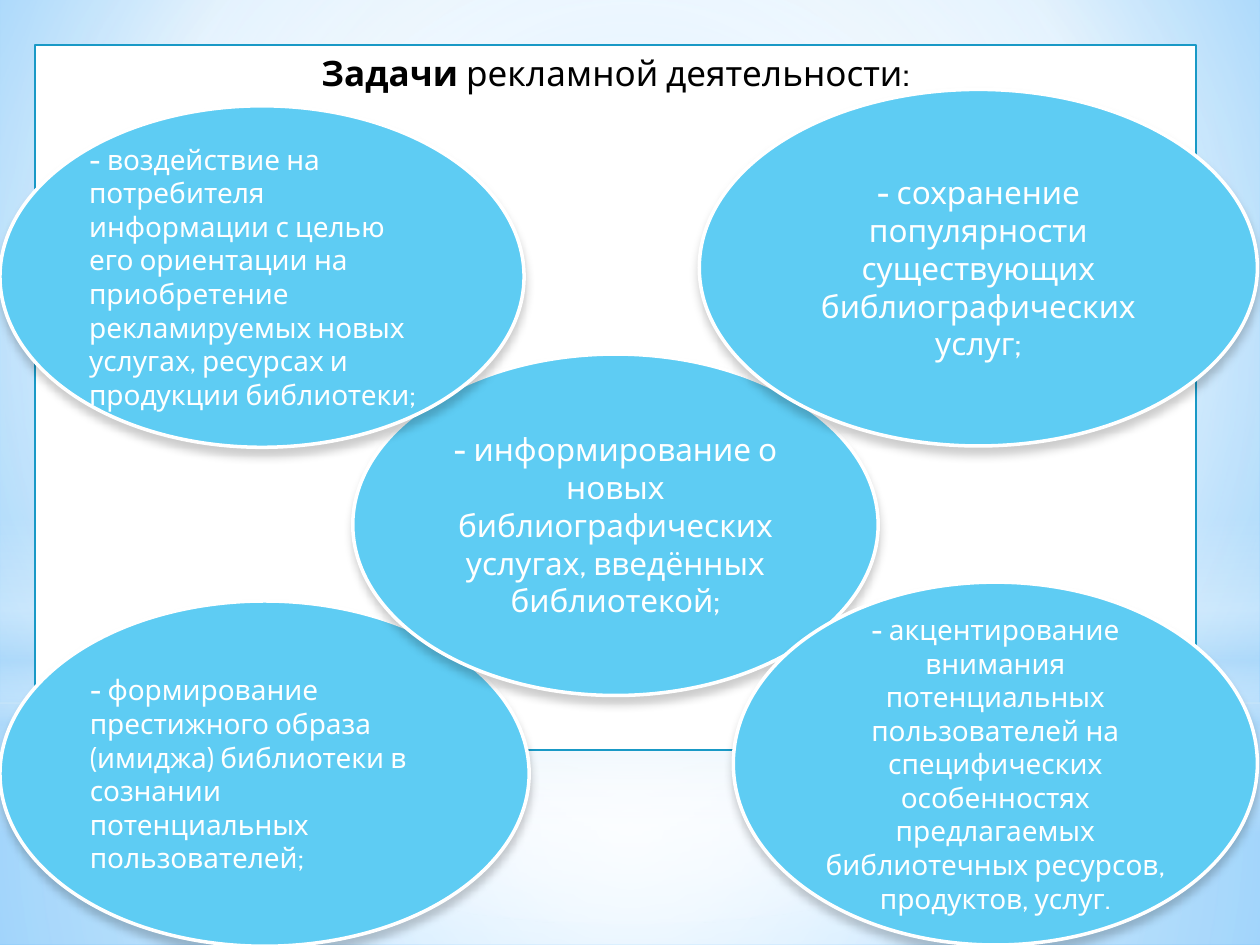
import pptx
import pptx.util
import pptx.dml.color
import pptx.enum.shapes
import pptx.enum.text
import pptx.oxml
import pptx.oxml.ns

COLS, ROWS = 100, 75  # grid cells across and down the slide
CELL = pptx.util.Inches(0.1)
HUES = {"white": "FFFFFF", "black": "000000", "edge": "1999C6", "oval": "5ECCF3",
        "pale": "B4DCFA", "sky": "9ED5FF", "deep": "5BB9FF"}
FORM = {"rect": pptx.enum.shapes.MSO_SHAPE.RECTANGLE,
        "oval": pptx.enum.shapes.MSO_SHAPE.OVAL}
ALIGN = pptx.enum.text.PP_ALIGN
ANCHOR = pptx.enum.text.MSO_ANCHOR
NS = pptx.oxml.ns.nsdecls("a")
MID = (50, 50, 50, 50)


def color(name):
    return pptx.dml.color.RGBColor.from_string(HUES[name])


def fade(stops, rect=None):
    """Gradient fill: stops are (place, hue, opacity); rect is the round centre."""
    marks = "".join(
        f'<a:gs pos="{at * 1000}"><a:srgbClr val="{HUES[hue]}">'
        f'<a:alpha val="{alpha * 1000}"/></a:srgbClr></a:gs>'
        for at, hue, alpha in stops)
    if rect:
        sides = " ".join(f'{s}="{v * 1000}"' for s, v in zip("ltrb", rect))
        way = f'<a:path path="circle"><a:fillToRect {sides}/></a:path>'
    else:
        way = '<a:lin ang="5400000" scaled="0"/>'
    return pptx.oxml.parse_xml(
        f'<a:gradFill {NS} rotWithShape="1"><a:gsLst>{marks}</a:gsLst>{way}</a:gradFill>')


def swap(parent, grad):
    old = parent.find(pptx.oxml.ns.qn("a:solidFill"))
    parent.replace(old, grad)


def shade(shape):
    """Soft shadow straight below the shape."""
    blur, dist = pptx.util.Pt(5), pptx.util.Pt(4)
    shape._element.spPr.append(pptx.oxml.parse_xml(
        f'<a:effectLst {NS}><a:outerShdw blurRad="{blur}" dist="{dist}" dir="5400000" '
        f'algn="ctr" rotWithShape="0"><a:srgbClr val="{HUES["black"]}">'
        '<a:alpha val="20000"/></a:srgbClr></a:outerShdw></a:effectLst>'))


def draw(slide, form, box, fill, edge=None, wide=0):
    shape = slide.shapes.add_shape(FORM[form], *(round(v * CELL) for v in box))
    shape.shadow.inherit = False
    shape.fill.solid()
    shape.fill.fore_color.rgb = color(fill)
    if edge:
        shape.line.color.rgb = color(edge)
        shape.line.width = pptx.util.Pt(wide)
    else:
        shape.line.fill.background()
    return shape


def write(shape, runs, size, hue, align, anchor):
    """Runs are (text, bold) pairs of one paragraph."""
    frame = shape.text_frame
    frame.word_wrap = True
    frame.vertical_anchor = anchor
    para = frame.paragraphs[0]
    para.alignment = align
    for text, bold in runs:
        run = para.add_run()
        run.text = text
        look = {"name": "Cabin", "size": pptx.util.Pt(size), "bold": bold}
        for key, value in look.items():
            setattr(run.font, key, value)
        run.font.color.rgb = color(hue)


def inside(box, part):
    """Move a part from the box's own corner to the slide's."""
    return (box[0] + part[0], box[1] + part[1], part[2], part[3])


def backdrop(slide, box):
    slide.background.fill.solid()
    base = slide._element.find(".//" + pptx.oxml.ns.qn("p:bgPr"))
    swap(base, fade([(0, "sky", 100), (60, "white", 100), (100, "deep", 100)],
                    (20, 10, 20, 60)))
    wide, split = box[2], 55.8
    veils = [
        ("rect", (0, split, wide, box[3] - split), MID,
         [(0, "white", 91), (37, "white", 76), (100, "pale", 79)]),
        ("rect", (0, 0, wide, split), MID,
         [(0, "white", 89), (48, "white", 62), (100, "pale", 79)]),
        ("rect", (0, 41.2, wide, 25), None,
         [(0, "white", 0), (29, "white", 30), (45, "pale", 40),
          (55, "white", 26), (65, "pale", 60), (100, "white", 0)]),
        ("oval", (0, 17.5, wide, split), MID, [(0, "white", 100), (56, "white", 0)]),
    ]
    for form, part, rect, stops in veils:
        veil = draw(slide, form, inside(box, part), "white")
        swap(veil._element.spPr, fade(stops, rect))


def panel(slide, box):
    sheet = draw(slide, "rect", box, "white", "edge", 1.25)
    write(sheet, [("Задачи ", True), ("рекламной деятельности:", False)],
          20, "black", ALIGN.CENTER, ANCHOR.TOP)


def tasks(slide, box):
    ovals = [
        ((0, 47.7, 42, 27.4), 16, ALIGN.LEFT,
         "формирование престижного образа (имиджа) библиотеки в сознании "
         "потенциальных пользователей;"),
        ((28, 28.1, 41.7, 27.1), 18, ALIGN.CENTER,
         "информирование о новых библиографических услугах, введённых библиотекой;"),
        ((55.5, 7.1, 44.3, 28.3), 18, ALIGN.CENTER,
         "сохранение популярности существующих библиографических услуг;"),
        ((0, 8.4, 41.6, 27.1), 16, ALIGN.LEFT,
         "воздействие на потребителя информации с целью его ориентации на "
         "приобретение рекламируемых новых услугах, ресурсах и продукции библиотеки;"),
        ((58.2, 46.2, 41.6, 28.8), 16, ALIGN.CENTER,
         "акцентирование внимания потенциальных пользователей на специфических "
         "особенностях предлагаемых библиотечных ресурсов, продуктов, услуг."),
    ]
    for part, size, align, text in ovals:
        oval = draw(slide, "oval", inside(box, part), "oval", "white", 2)
        oval._element.spPr.remove(oval._element.spPr.find(pptx.oxml.ns.qn("a:effectLst")))
        shade(oval)
        write(oval, [("-", True), (" " + text, False)], size, "white", align, ANCHOR.MIDDLE)


def main():
    deck = pptx.Presentation()
    deck.slide_width, deck.slide_height = COLS * CELL, ROWS * CELL
    slide = deck.slides.add_slide(deck.slide_layouts[6])
    full = (0, 0, COLS, ROWS)
    backdrop(slide, full)
    panel(slide, (2.8, 3.6, 92.1, 55.9))
    tasks(slide, full)
    deck.save("out.pptx")


if __name__ == "__main__":
    main()
